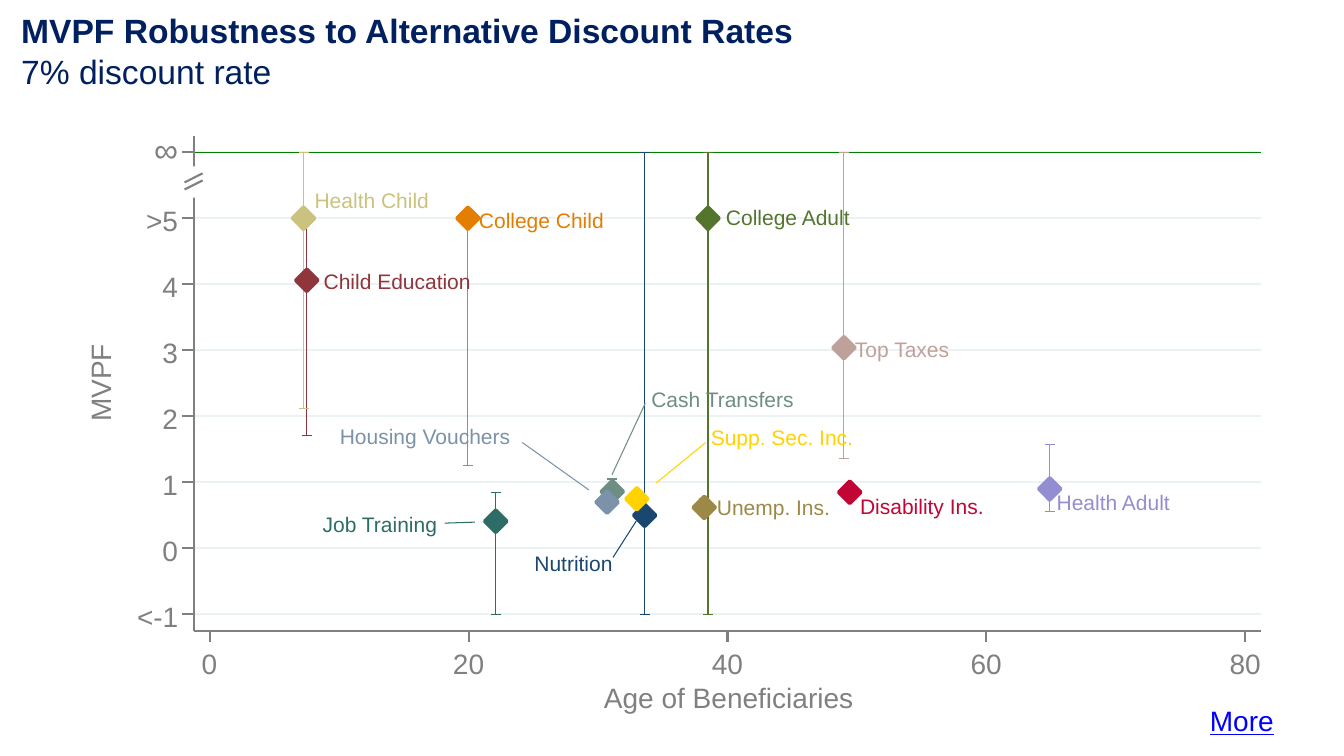
import pptx
import pptx.util
import pptx.dml.color
import pptx.enum.shapes
import pptx.oxml.ns
import lxml.etree

Inches = pptx.util.Inches
Pt = pptx.util.Pt
RGBColor = pptx.dml.color.RGBColor
qn = pptx.oxml.ns.qn

WHITE = RGBColor(0xFF, 0xFF, 0xFF)
GREY = RGBColor(0x80, 0x80, 0x80)
PALE = RGBColor(0xEA, 0xF2, 0xF3)
GREEN = RGBColor(0x00, 0x80, 0x00)
NAVY = RGBColor(0x00, 0x20, 0x60)
BLUE = RGBColor(0x00, 0x00, 0xFF)
SAGE = RGBColor(0x6E, 0x8E, 0x84)
MAROON = RGBColor(0x90, 0x35, 0x3B)
MOSS = RGBColor(0x55, 0x75, 0x2F)
ORANGE = RGBColor(0xE3, 0x7E, 0x00)
RED = RGBColor(0xC1, 0x05, 0x34)
LILAC = RGBColor(0x93, 0x8D, 0xD2)
SAND = RGBColor(0xCA, 0xC2, 0x7E)
SLATE = RGBColor(0x7B, 0x92, 0xA8)
TEAL = RGBColor(0x2D, 0x6D, 0x66)
INDIGO = RGBColor(0x1A, 0x47, 0x6F)
YELLOW = RGBColor(0xFF, 0xD2, 0x00)
ROSE = RGBColor(0xBF, 0xA1, 0x9C)
OLIVE = RGBColor(0x9C, 0x88, 0x47)

LEFT, RIGHT, TOP, BASE = 1.92, 12.51, 1.35, 6.26
ZERO_X, ZERO_Y = 2.08, 5.44
YEAR, UNIT = 10.27 / 80, 0.655
CAP, HALF, TICK = 0.05, 0.11, 0.11

deck = pptx.Presentation()
deck.slide_width = Inches(13.33)
deck.slide_height = Inches(7.5)
slide = deck.slides.add_slide(deck.slide_layouts[6])
shapes = slide.shapes


def line(x1, y1, x2, y2, color, width, home=shapes):
    rule = home.add_connector(pptx.enum.shapes.MSO_CONNECTOR.STRAIGHT,
                              Inches(x1), Inches(y1), Inches(x2), Inches(y2))
    rule.line.color.rgb = color
    rule.line.width = Pt(width)
    lxml.etree.SubElement(rule._element.spPr, qn("a:effectLst"))


def text(x, y, wide, high, rows, size, color, home=shapes):
    box = home.add_textbox(Inches(x), Inches(y), Inches(wide), Inches(high))
    frame = box.text_frame
    frame.word_wrap = True
    frame.margin_left = frame.margin_right = 0
    frame.margin_top = frame.margin_bottom = 0
    for i, words in enumerate(rows):
        para = frame.add_paragraph() if i else frame.paragraphs[0]
        run = para.add_run()
        run.text = words
        run.font.name = "Arial"
        run.font.size = Pt(size)
        run.font.color.rgb = color
    return box


for level in range(-1, 7):
    y = ZERO_Y - level * UNIT
    line(LEFT, y, RIGHT, y, PALE, 1.5)
line(LEFT, y, RIGHT, y, GREEN, 0.75)

# name, colour, age, value, low, high, label left, label top
groups = [
    ("Cash Transfers", SAGE, 31.1, 0.86, 0.69, 1.05, 6.46, 3.83),
    ("Child Education", MAROON, 7.5, 4.06, 1.71, 5, 3.21, 2.66),
    ("College Adult", MOSS, 38.5, 5, -1, 6, 7.2, 2.03),
    ("College Child", ORANGE, 19.95, 5, 1.25, 5, 4.75, 2.06),
    ("Disability Ins.", RED, 49.45, 0.85, 0.82, 0.88, 8.53, 4.9),
    ("Health Adult", LILAC, 64.9, 0.9, 0.56, 1.57, 10.48, 4.86),
    ("Health Child", SAND, 7.25, 5, 2.12, 6, 3.12, 1.86),
    ("Housing Vouchers", SLATE, 30.7, 0.7, 0.67, 0.75, 3.37, 4.2),
    ("Job Training", TEAL, 22.1, 0.41, -1, 0.85, 3.2, 5.07),
    ("Nutrition", INDIGO, 33.6, 0.5, -1, 6, 5.3, 5.46),
    ("Supp. Sec. Inc.", YELLOW, 33, 0.75, 0.64, 0.85, 7.05, 4.21),
    ("Top Taxes", ROSE, 49, 3.04, 1.36, 6, 8.48, 3.34),
    ("Unemp. Ins.", OLIVE, 38.2, 0.62, 0.53, 0.75, 7.11, 4.91),
]

for name, color, age, value, low, high, left, top in groups:
    x = ZERO_X + age * YEAR
    ends = [ZERO_Y - bound * UNIT for bound in (low, high)]
    line(x, ends[0], x, ends[1], color, 0.75)
    for y in ends:
        line(x - CAP, y, x + CAP, y, color, 0.75)

for name, color, age, value, low, high, left, top in groups:
    x, y = ZERO_X + age * YEAR, ZERO_Y - value * UNIT
    path = shapes.build_freeform(Inches(x), Inches(y - HALF))
    path.add_line_segments([(Inches(x - HALF), Inches(y)),
                            (Inches(x), Inches(y + HALF)),
                            (Inches(x + HALF), Inches(y))], close=True)
    mark = path.convert_to_shape()
    mark.shadow.inherit = False
    mark.fill.solid()
    mark.fill.fore_color.rgb = color
    mark.line.color.rgb = color
    mark.line.width = Pt(2.5)

line(LEFT, BASE, LEFT, TOP, GREY, 1.5)
for level in range(-1, 7):
    y = ZERO_Y - level * UNIT
    line(LEFT, y, LEFT - TICK, y, GREY, 1.5)
    if level < 6:
        words, left = {-1: ("<-1", 1.36), 5: (">5", 1.45)}.get(level, (str(level), 1.61))
        text(left, y - 0.15, 0.54, 0.39, [words], 20, GREY)

line(LEFT, BASE, RIGHT, BASE, GREY, 1.5)
for age in range(0, 81, 20):
    x = ZERO_X + age * YEAR
    line(x, BASE, x, BASE + TICK, GREY, 1.5)
    text(x - (0.155 if age else 0.08), 6.41, 0.44, 0.39, [str(age)], 20, GREY)

text(0.57, 3.54, 0.9, 0.39, ["MVPF"], 20, GREY).rotation = 270
text(5.99, 6.75, 2.62, 0.39, ["Age of Beneficiaries"], 20, GREY)

title = text(0.21, 0.1, 11.62, 0.81,
             ["MVPF Robustness to Alternative Discount Rates", "7% discount rate"], 24, NAVY)
title.text_frame.paragraphs[0].runs[0].font.bold = True

gap = shapes.add_group_shape()
mask = gap.shapes.add_shape(pptx.enum.shapes.MSO_SHAPE.RECTANGLE,
                            Inches(1.61), Inches(1.65), Inches(0.58), Inches(0.31))
mask.shadow.inherit = False
mask.fill.solid()
mask.fill.fore_color.rgb = WHITE
mask.line.fill.background()
for y in (1.81, 1.88):
    line(LEFT - 0.09, y, LEFT + 0.09, y - 0.09, GREY, 1.5, gap.shapes)
text(1.53, 1.28, 0.3, 0.4, ["∞"], 24, GREY, gap.shapes)

for name, color, age, value, low, high, left, top in groups:
    text(left, top, 1.88, 0.3, [name], 15, color)

for x1, y1, x2, y2, color in [
    (5.18, 4.39, 5.84, 4.86, SLATE),
    (6.31, 5.17, 6.08, 5.53, INDIGO),
    (4.41, 5.19, 4.71, 5.18, TEAL),
    (6.4, 4, 6.07, 4.71, SAGE),
    (6.51, 4.79, 7, 4.39, YELLOW),
]:
    line(x1, y1, x2, y2, color, 0.75)

more = text(12, 6.98, 0.8, 0.34, ["More"], 20, BLUE)
more.text_frame.paragraphs[0].runs[0].font.underline = True

deck.save("out.pptx")
